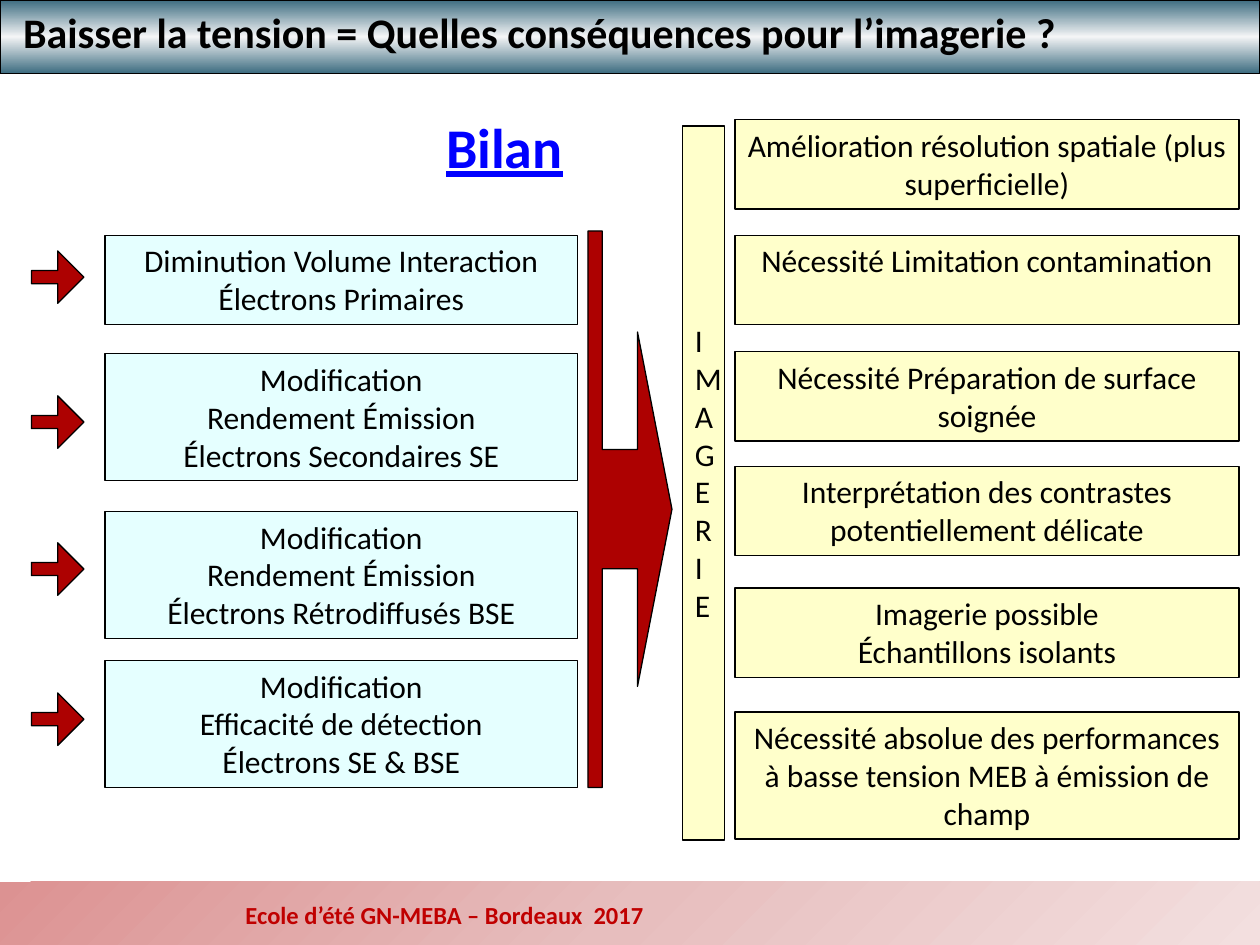
from lxml.etree import SubElement
from pptx import Presentation
from pptx.dml.color import RGBColor
from pptx.enum.shapes import MSO_SHAPE as SHAPE
from pptx.enum.text import MSO_ANCHOR as ANCHOR, PP_ALIGN as ALIGN
from pptx.oxml.ns import qn
from pptx.util import Inches, Pt

COLORS = {"black": "000000", "red": "AD0101", "footer": "C00000", "blue": "0000FF",
          "cyan": "CCFFFF", "yellow": "FFFF99"}
BAND = ["3D6C80", "F4F5F6", "3D6C80"]
FOOT = ["DC9292", "E7BEBE", "F3DFDF"]

CAUSES = [
    (22.4, 8.5, 23.9, ["Diminution Volume Interaction Électrons Primaires"]),
    (33.7, 12.1, 37.7, ["Modification", "Rendement Émission", "Électrons Secondaires SE"]),
    (48.7, 12.1, 51.7, ["Modification", "Rendement Émission", "Électrons Rétrodiffusés BSE"]),
    (62.9, 12.1, 66, ["Modification", "Efficacité de détection", "Électrons SE & BSE"]),
]
EFFECTS = [
    (11.4, 8.5, ["Amélioration résolution spatiale (plus superficielle)"]),
    (22.4, 8.5, ["Nécessité Limitation contamination"]),
    (33.5, 8.5, ["Nécessité Préparation de surface soignée"]),
    (44.4, 8.5, ["Interprétation des contrastes potentiellement délicate"]),
    (56, 8.5, ["Imagerie possible", "Échantillons isolants"]),
    (67.8, 12.1, ["Nécessité absolue des performances à basse tension MEB à émission de champ"]),
]


class Deck:
    """Style and current slide, laid out on a grid of 120 columns by 90 rows."""

    def __init__(self):
        self.prs = Presentation()
        self.prs.slide_width, self.prs.slide_height = Inches(10), Inches(7.5)
        self.s = self.prs.slides.add_slide(self.prs.slide_layouts[5])
        self.font = {"name": "Calibri", "size": Pt(18), "bold": False}

    def box(self, x, y, w, h):
        col, row = self.prs.slide_width / 120, self.prs.slide_height / 90
        return [int(x * col), int(y * row), int(w * col), int(h * row)]

    def fill_text(self, sp, lines, align=ALIGN.LEFT, color="black", wrap=True, **fmt):
        tf = sp.text_frame
        tf.word_wrap, tf.vertical_anchor = wrap, ANCHOR.TOP
        tf.text = "\n".join(lines)
        for p in tf.paragraphs:
            p.alignment = align
            for r in p.runs:
                for key, value in {**self.font, **fmt}.items():
                    setattr(r.font, key, value)
                r.font.color.rgb = RGBColor.from_string(COLORS[color])

    def shape(self, kind, grid, fill=None, alpha=None, line=True, adj=()):
        sp = self.s.shapes.add_shape(kind, *self.box(*grid))
        sp.shadow.inherit = False
        for i, value in enumerate(adj):
            sp.adjustments[i] = value
        if fill:
            sp.fill.solid()
            sp.fill.fore_color.rgb = RGBColor.from_string(COLORS[fill])
        if alpha:
            color = sp._element.spPr.find(f"{qn('a:solidFill')}/{qn('a:srgbClr')}")
            SubElement(color, qn("a:alpha"), val=str(alpha * 1000))
        if line:
            sp.line.color.rgb = RGBColor.from_string(COLORS["black"])
            sp.line.width = Pt(0.75)
        else:
            sp.line.fill.background()
        return sp

    def gradient(self, grid, stops, angle, line):
        sp = self.shape(SHAPE.RECTANGLE, grid, line=line)
        sp.fill.gradient()
        grad = sp._element.spPr.find(qn("a:gradFill"))
        for child in list(grad):
            grad.remove(child)
        gs_lst = SubElement(grad, qn("a:gsLst"))
        for i, stop in enumerate(stops):
            gs = SubElement(gs_lst, qn("a:gs"), pos=str(i * 50000))
            SubElement(gs, qn("a:srgbClr"), val=stop)
        SubElement(grad, qn("a:lin"), ang=str(angle * 60000), scaled="0")

    def card(self, grid, fill, lines):
        sp = self.shape(SHAPE.RECTANGLE, grid, fill, alpha=50)
        self.fill_text(sp, lines, ALIGN.CENTER)

    def arrow(self, grid):
        self.shape(SHAPE.RIGHT_ARROW, grid, "red", adj=(0.25, 0.5))

    def text(self, grid, line, **fmt):
        self.fill_text(self.s.shapes.add_textbox(*self.box(*grid)), [line], **fmt)

    def title(self, grid, line):
        sp = self.s.shapes.title
        sp.left, sp.top, sp.width, sp.height = self.box(*grid)
        self.fill_text(sp, [line], size=Pt(24), bold=True)
        sp._element.getparent().append(sp._element)


def main():
    deck = Deck()
    deck.gradient((0, 84, 120, 6), FOOT, 45, line=False)
    deck.text((22.2, 85.1, 40.6, 4.1), "Ecole d’été GN-MEBA – Bordeaux  2017",
              size=Pt(14), bold=True, color="footer", wrap=False)
    deck.gradient((0, 0, 120, 7), BAND, 90, line=True)
    deck.title((1, 0, 117.8, 6), "Baisser la tension = Quelles conséquences pour l’imagerie ?")
    deck.text((41.2, 10.1, 13.7, 7.7), "Bilan", align=ALIGN.CENTER, size=Pt(32),
              bold=True, underline=True, color="blue", wrap=False)
    for y, h, arrow_y, lines in CAUSES:
        deck.arrow((3, arrow_y, 5, 5))
        deck.card((10, y, 45, h), "cyan", lines)
    deck.shape(SHAPE.RIGHT_ARROW_CALLOUT, (56, 22, 8, 53), "red",
               adj=(1.42, 2.11, 0.41, 0.17))
    deck.shape(SHAPE.RECTANGLE, (65, 12, 4, 68), "yellow", alpha=50)
    deck.text((65, 30, 4.2, 30), "IMAGERIE")
    for y, h, lines in EFFECTS:
        deck.card((70, y, 48, h), "yellow", lines)
    deck.prs.save("out.pptx")


if __name__ == "__main__":
    main()
